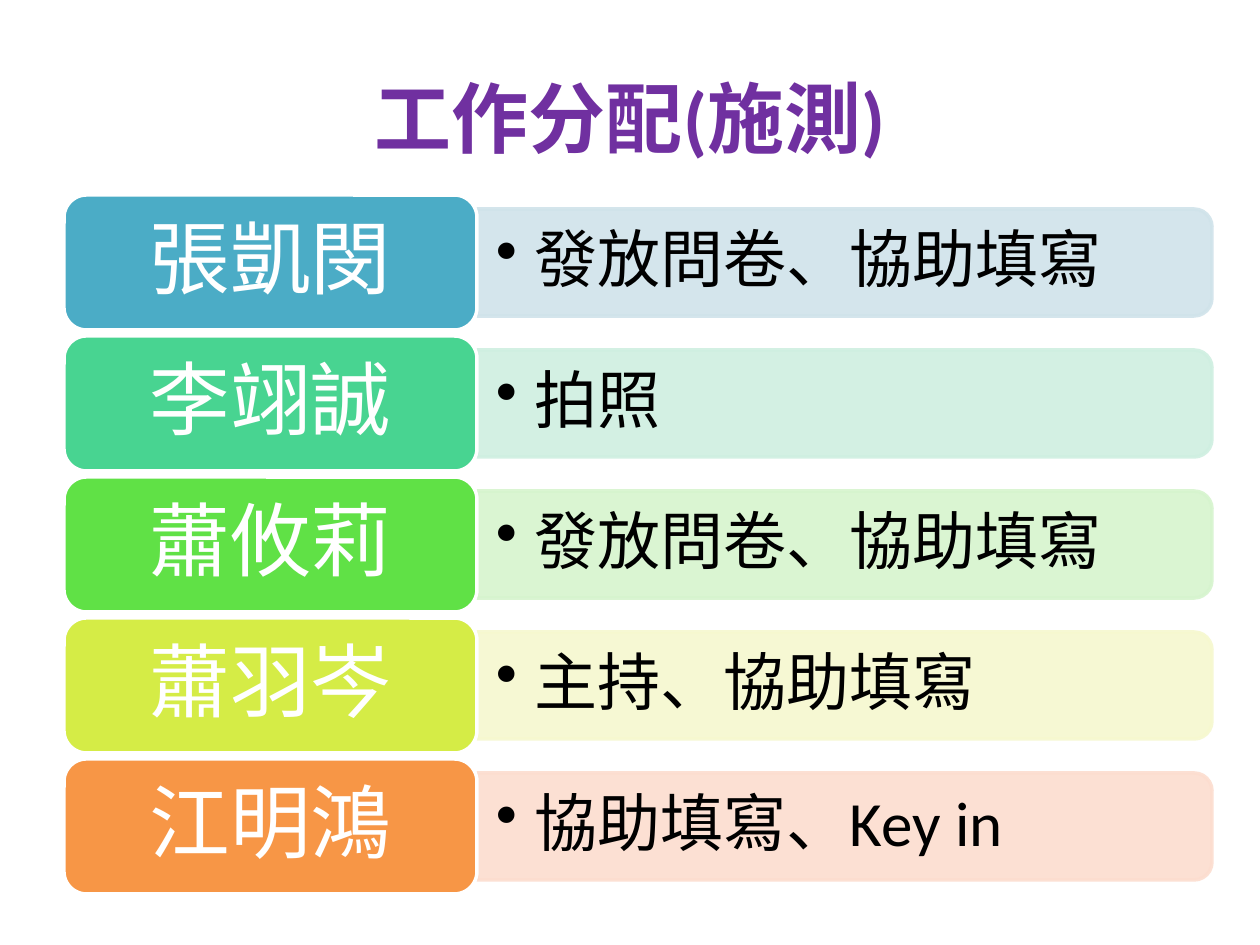
from lxml import etree
from pptx import Presentation
from pptx import util as u
from pptx.dml.color import RGBColor
from pptx.enum import shapes, text
from pptx.oxml import ns

PX = u.Inches(1) // 126
FONT = "Calibri"
PURPLE = RGBColor(0x70, 0x30, 0xA0)
WHITE = RGBColor(0xFF, 0xFF, 0xFF)
BLACK = RGBColor(0x00, 0x00, 0x00)
BLUE = RGBColor(0x4B, 0xAC, 0xC6)
TEAL = RGBColor(0x48, 0xD4, 0x91)
GREEN = RGBColor(0x60, 0xE1, 0x46)
LIME = RGBColor(0xD5, 0xEC, 0x46)
ORANGE = RGBColor(0xF7, 0x96, 0x46)
PALE_BLUE = RGBColor(0xD0, 0xE3, 0xEA)
PALE_TEAL = RGBColor(0xCF, 0xEF, 0xE1)
PALE_GREEN = RGBColor(0xD6, 0xF4, 0xCE)
PALE_LIME = RGBColor(0xF6, 0xF8, 0xCF)
PALE_ORANGE = RGBColor(0xFC, 0xDD, 0xCF)

ASSIGNMENTS = [
    ("張凱閔", "發放問卷、協助填寫", BLUE, PALE_BLUE),
    ("李翊誠", "拍照", TEAL, PALE_TEAL),
    ("蕭攸莉", "發放問卷、協助填寫", GREEN, PALE_GREEN),
    ("蕭羽岑", "主持、協助填寫", LIME, PALE_LIME),
    ("江明鴻", "協助填寫、Key in", ORANGE, PALE_ORANGE),
]
ROW_TOP, ROW_PITCH = 195, 141
CARD_LEFT, CARD_WIDTH, CARD_HEIGHT = 64, 413, 135
BAR_LENGTH, BAR_HEIGHT = 735, 107
TASK_WIDTH, TASK_HEIGHT = 730, 97

TITLE_FONT = {"size": u.Pt(44), "bold": True}
NAME_FONT = {"size": u.Pt(46)}
TASK_FONT = {"size": u.Pt(36)}


def box(left, top, width, height):
    return [length * PX for length in (left, top, width, height)]


def write(shape, words, font, color, margins, align=text.PP_ALIGN.CENTER, spacing=0.9, bullet=False):
    frame = shape.text_frame
    side, end = margins
    settings = {
        "word_wrap": True,
        "vertical_anchor": text.MSO_ANCHOR.MIDDLE,
        "margin_left": side * PX,
        "margin_right": side * PX,
        "margin_top": end * PX,
        "margin_bottom": end * PX,
    }
    for name, value in settings.items():
        setattr(frame, name, value)
    paragraph = frame.paragraphs[0]
    paragraph.text = words
    paragraph.alignment = align
    paragraph.line_spacing = spacing
    if bullet:
        add_bullet(paragraph)
    run = paragraph.runs[0]
    for name, value in {"name": FONT, **font}.items():
        setattr(run.font, name, value)
    run.font.color.rgb = color


def add_bullet(paragraph):
    paragraph.level = 1
    properties = paragraph._p.get_or_add_pPr()
    properties.set("marL", str(39 * PX))
    properties.set("indent", str(-39 * PX))
    etree.SubElement(properties, ns.qn("a:buChar")).set("char", "•")


def add_panel(slide, kind, place, fill, line):
    panel = slide.shapes.add_shape(kind, *place)
    panel.shadow.inherit = False
    panel.fill.solid()
    panel.fill.fore_color.rgb = fill
    panel.line.color.rgb = line
    panel.line.width = u.Pt(2)
    return panel


def make_translucent(shape, percent):
    """Give the fill and the outline the same opacity."""
    for color in shape._element.spPr.iter(ns.qn("a:srgbClr")):
        etree.SubElement(color, ns.qn("a:alpha")).set("val", str(percent * 1000))


def add_title(slide, words):
    title = slide.shapes.add_textbox(*box(63, 38, 1134, 157))
    write(title, words, TITLE_FONT, PURPLE, (13, 6), spacing=1.0)


def add_task_bar(slide, middle, task, fill):
    """Add a bar, turned so that its rounded end points right, and its task."""
    left = CARD_LEFT + CARD_WIDTH
    place = box(left + (BAR_LENGTH - BAR_HEIGHT) / 2, middle - BAR_LENGTH / 2, BAR_HEIGHT, BAR_LENGTH)
    bar = add_panel(slide, shapes.MSO_SHAPE.ROUND_2_SAME_RECTANGLE, map(int, place), fill, fill)
    bar.rotation = 90
    make_translucent(bar, 90)
    label = slide.shapes.add_textbox(*map(int, box(left, middle - TASK_HEIGHT / 2, TASK_WIDTH, TASK_HEIGHT)))
    write(label, task, TASK_FONT, BLACK, (19, 9), align=text.PP_ALIGN.LEFT, bullet=True)


def add_name_card(slide, top, name, fill):
    place = box(CARD_LEFT, top, CARD_WIDTH, CARD_HEIGHT)
    card = add_panel(slide, shapes.MSO_SHAPE.ROUNDED_RECTANGLE, place, fill, WHITE)
    write(card, name, NAME_FONT, WHITE, (24, 12))


def main():
    presentation = Presentation()
    presentation.slide_width = u.Inches(10)
    presentation.slide_height = u.Inches(7.5)
    slide = presentation.slides.add_slide(presentation.slide_layouts[6])
    add_title(slide, "工作分配(施測)")
    for row, (name, task, color, pale_color) in enumerate(ASSIGNMENTS):
        top = ROW_TOP + row * ROW_PITCH
        add_task_bar(slide, top + CARD_HEIGHT / 2, task, pale_color)
        add_name_card(slide, top, name, color)
    presentation.save("out.pptx")


if __name__ == "__main__":
    main()
